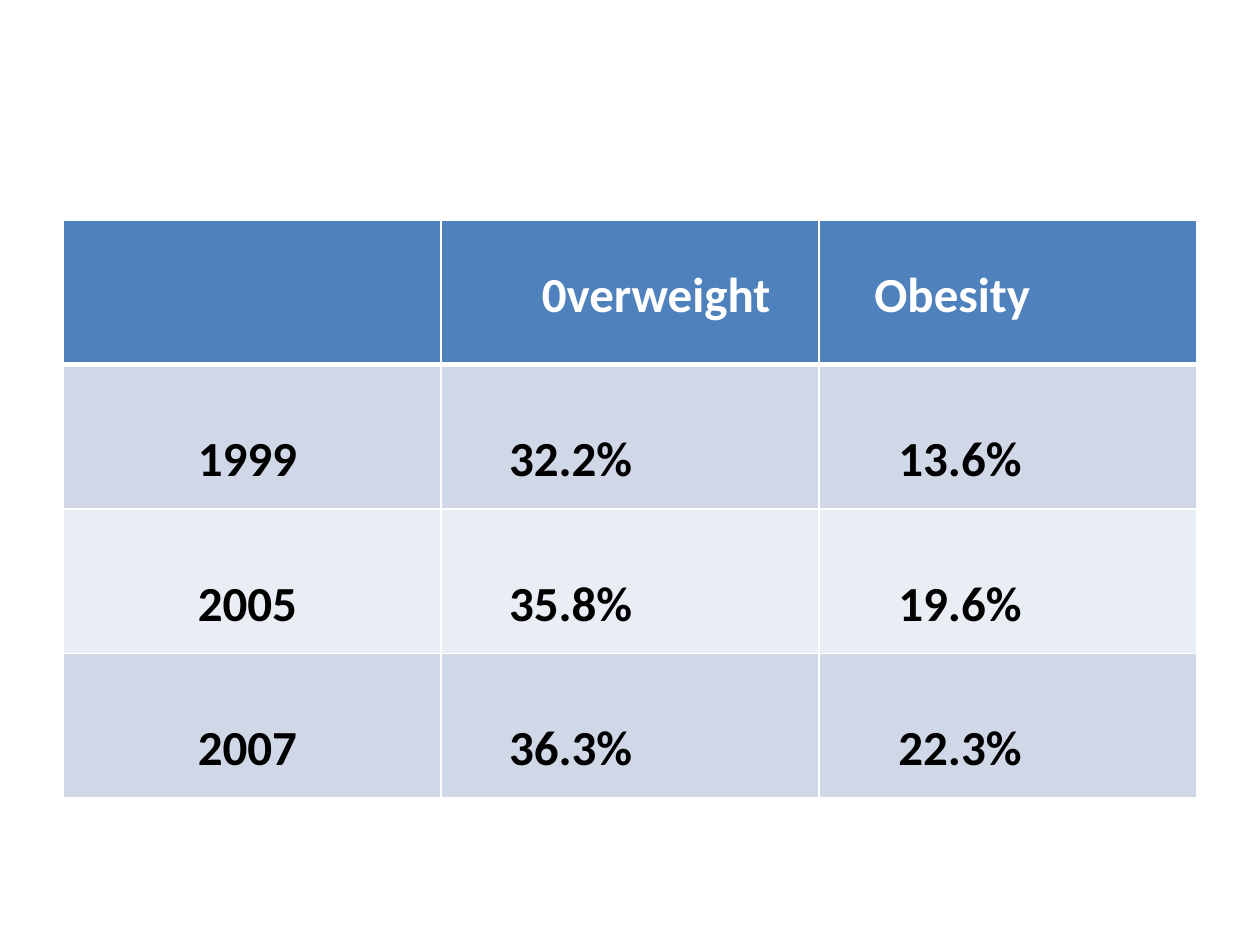
from pptx import Presentation
from pptx.dml.color import RGBColor as RGB
from pptx.enum.text import MSO_ANCHOR as Anchor
from pptx.oxml import parse_xml
from pptx.oxml.ns import nsdecls
from pptx.util import Inches, Pt

HEAD = ("", "0verweight", "Obesity")
ROWS = [
    ("1999", "32.2%", "13.6%"),
    ("2005", "35.8%", "19.6%"),
    ("2007", "36.3%", "22.3%"),
]
THEME = dict(font="Calibri", size=28, head="4F81BD", bands=("D0D8E8", "E9EDF4"),
             light="FFFFFF", dark="000000", thin=1, thick=3)
BOX = (0.5, 1.75, 9, 4.58)
HEAD_PAD = dict(top=0.36, lefts=(0.1, 0.8, 0.44))
BODY_PAD = dict(top=0.52, lefts=(1.07, 0.54, 0.63))


def write(cell, text, *, color, left, top):
    cell.margin_left, cell.margin_top = Inches(left), Inches(top)
    cell.vertical_anchor = Anchor.TOP
    para = cell.text_frame.paragraphs[0]
    para.font.size = Pt(THEME["size"])
    if text:
        run = para.add_run()
        run.text = text
        font = run.font
        font.name, font.size, font.bold = THEME["font"], Pt(THEME["size"]), True
        font.color.rgb = RGB.from_string(color)


def paint(cell, fill, **edges):
    cell.fill.solid()
    cell.fill.fore_color.rgb = RGB.from_string(fill)
    props = cell._tc.get_or_add_tcPr()
    for spot, side in enumerate("LRTB"):
        width = Pt(edges.get(side, THEME["thin"]))
        props.insert(spot, parse_xml(
            f'<a:ln{side} {nsdecls("a")} w="{width}"><a:solidFill>'
            f'<a:srgbClr val="{THEME["light"]}"/></a:solidFill></a:ln{side}>'))


def main():
    """Build the slide with the overweight and obesity table."""
    deck = Presentation()
    deck.slide_width, deck.slide_height = Inches(10), Inches(7.5)
    slide = deck.slides.add_slide(deck.slide_layouts[6])
    data = [HEAD, *ROWS]
    table = slide.shapes.add_table(len(data), len(HEAD), *map(Inches, BOX)).table
    for r, row in enumerate(data):
        pad = BODY_PAD if r else HEAD_PAD
        fill = THEME["bands"][(r - 1) % 2] if r else THEME["head"]
        color = THEME["dark"] if r else THEME["light"]
        edges = {0: {"B": THEME["thick"]}, 1: {"T": THEME["thick"]}}.get(r, {})
        for c, text in enumerate(row):
            cell = table.cell(r, c)
            write(cell, text, color=color, left=pad["lefts"][c], top=pad["top"])
            paint(cell, fill, **edges)
    deck.save("out.pptx")


if __name__ == "__main__":
    main()
